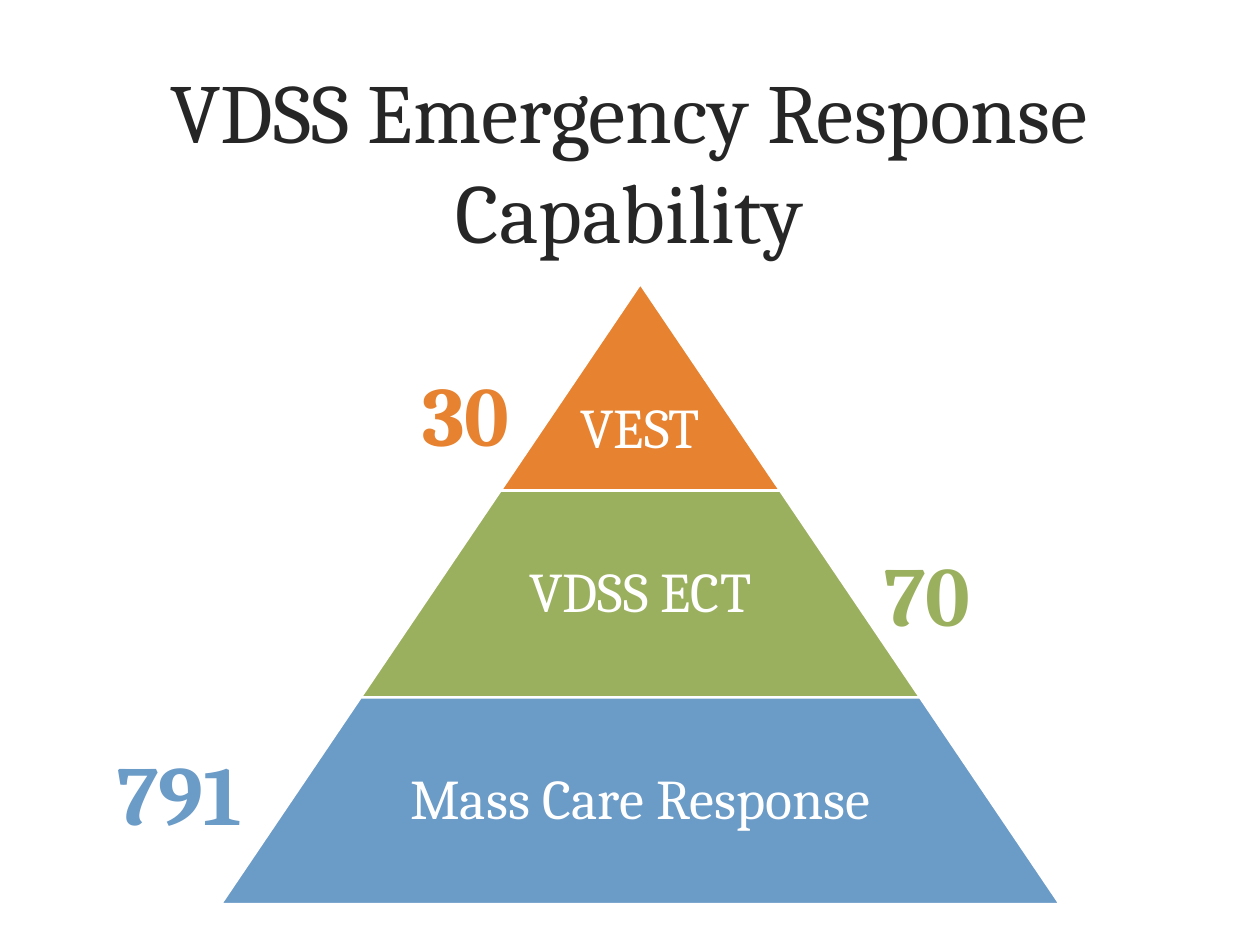
"""Build the emergency response capability pyramid slide."""
from pptx import Presentation
from pptx.dml.color import RGBColor
from pptx.enum.shapes import MSO_SHAPE
from pptx.enum.text import MSO_ANCHOR, PP_ALIGN
from pptx.util import Cm, Pt

TRAPEZOID = MSO_SHAPE.TRAPEZOID
TOP, MIDDLE = MSO_ANCHOR.TOP, MSO_ANCHOR.MIDDLE
LEFT, CENTER = PP_ALIGN.LEFT, PP_ALIGN.CENTER
WHITE = "FFFFFF"
PYRAMID_CENTER, PYRAMID_TOP = 12.91, 5.72
TIER_HEIGHT, TIER_STEP = 4.17, 2.82


def color(hex_string):
    return RGBColor.from_string(hex_string)


def add_text(text, left, top, width, height, *, size, fill, bold=False,
             align=CENTER, anchor=MIDDLE, spacing=None):
    box = slide.shapes.add_textbox(Cm(left), Cm(top), Cm(width), Cm(height))
    frame = box.text_frame
    frame.word_wrap = True
    frame.vertical_anchor = anchor
    paragraph = frame.paragraphs[0]
    paragraph.alignment = align
    paragraph.line_spacing = spacing
    run = paragraph.add_run()
    run.text = text
    run.font.name = "Cambria"
    run.font.size = Pt(size)
    run.font.bold = bold
    run.font.color.rgb = color(fill)
    return frame


presentation = Presentation()
presentation.slide_width = Cm(25.4)
presentation.slide_height = Cm(19.05)
slide = presentation.slides.add_slide(presentation.slide_layouts[6])

add_text("VDSS Emergency Response Capability", 1.52, 1.22, 22.33, 4.01,
         size=48, fill="262626")

tiers = [
    ("VEST", "E68230", 1.83, "30", 8.26, 7.19, 2.97),
    ("VDSS ECT", "9BB05E", 0.1, "70", 17.58, 10.82, 2.97),
    ("Mass Care Response", "6B9BC7", 0.1, "791", 2.11, 14.83, 4.01),
]
for index, (label, fill, inset_top, count, count_left, count_top, count_width) in enumerate(tiers):
    top = PYRAMID_TOP + index * TIER_HEIGHT
    width = 2 * TIER_STEP * (index + 1)
    tier = slide.shapes.add_shape(TRAPEZOID, Cm(PYRAMID_CENTER - width / 2), Cm(top),
                                  Cm(width), Cm(TIER_HEIGHT))
    tier.adjustments[0] = TIER_STEP / TIER_HEIGHT
    tier.shadow.inherit = False
    tier.fill.solid()
    tier.fill.fore_color.rgb = color(fill)
    tier.line.color.rgb = color(WHITE)
    tier.line.width = Pt(1.5)

    label_width = max(2 * TIER_STEP, 0.65 * width)
    frame = add_text(label, PYRAMID_CENTER - label_width / 2, top, label_width, TIER_HEIGHT,
                     size=32, fill=WHITE, spacing=0.9)
    frame.margin_left = frame.margin_right = frame.margin_bottom = Cm(0.1)
    frame.margin_top = Cm(inset_top)

    add_text(count, count_left, count_top, count_width, 2.31,
             size=48, fill=fill, bold=True, align=LEFT, anchor=TOP)

presentation.save("out.pptx")
